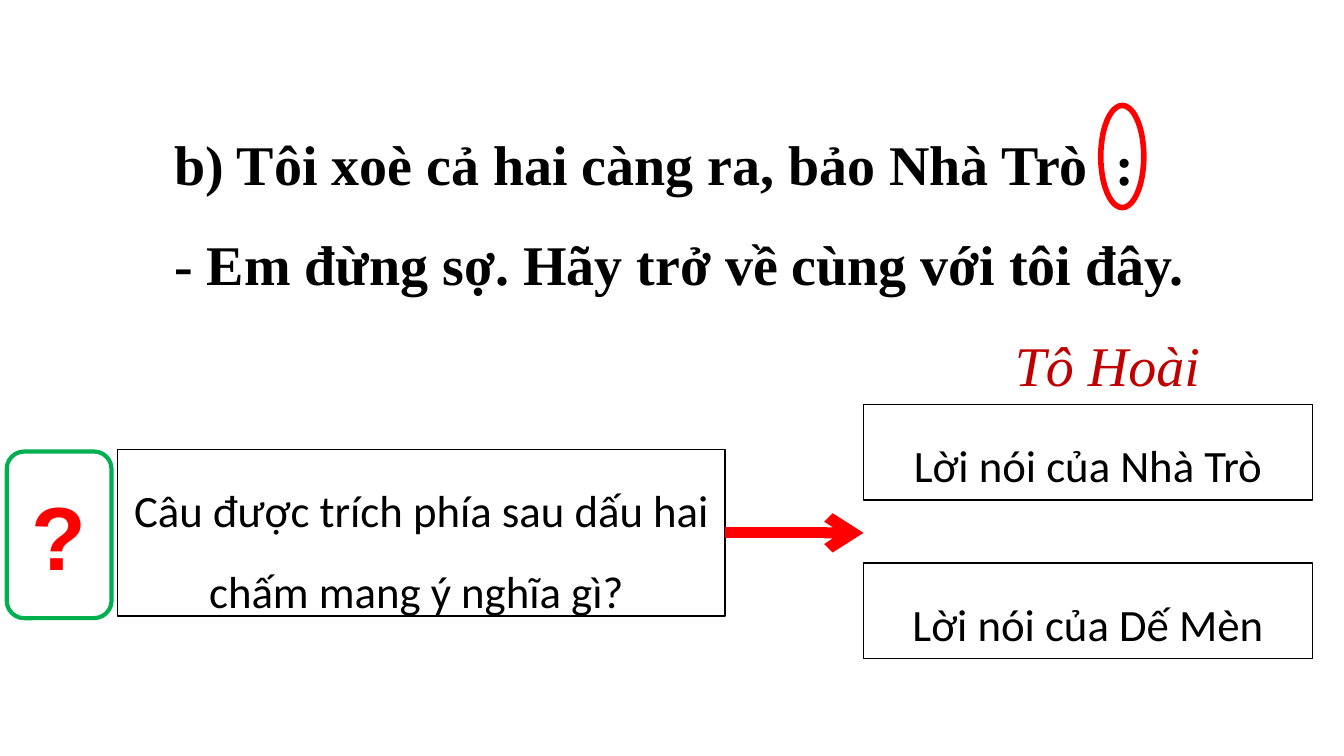
from lxml import etree
from pptx import Presentation
from pptx.dml.color import RGBColor
from pptx.enum.shapes import MSO_CONNECTOR, MSO_SHAPE
from pptx.enum.text import MSO_ANCHOR, MSO_AUTO_SIZE, PP_ALIGN
from pptx.oxml.ns import qn
from pptx.util import Pt

PX = 4572  # 200 px to the inch
RECT, ROUND, OVAL = MSO_SHAPE.RECTANGLE, MSO_SHAPE.ROUNDED_RECTANGLE, MSO_SHAPE.OVAL
LEFT, MID, JUST = PP_ALIGN.LEFT, PP_ALIGN.CENTER, PP_ALIGN.JUSTIFY
TOP, MIDDLE = MSO_ANCHOR.TOP, MSO_ANCHOR.MIDDLE
GROW = MSO_AUTO_SIZE.SHAPE_TO_FIT_TEXT


def color(code):
    return RGBColor.from_string(code)


def style(para, align, face, size, code, bold=False, space=1.5):
    para.alignment = align
    para.line_spacing = space
    font = para.font
    font.name, font.size, font.bold = face, Pt(size), bold
    font.color.rgb = color(code)


prs = Presentation()
prs.slide_width, prs.slide_height = 2000 * PX, 1125 * PX
slide = prs.slides.add_slide(prs.slide_layouts[6])
shapes = slide.shapes

# Quoted passage and its author
quote = shapes.add_textbox(244 * PX, 134 * PX, 1670 * PX, 470 * PX)
frame = quote.text_frame
frame.word_wrap = True
frame.auto_size = GROW
frame.margin_left = frame.margin_right = 15 * PX
frame.margin_top = frame.margin_bottom = 8 * PX
lines = [
    ("b) Tôi xoè cả hai càng ra, bảo Nhà Trò  : ", JUST, "000000", True),
    ("- Em đừng sợ. Hãy trở về cùng với tôi đây. ", JUST, "000000", True),
    ("Tô Hoài", LEFT, "C00000", False),
]
for i, (text, align, code, bold) in enumerate(lines):
    para = frame.add_paragraph() if i else frame.paragraphs[0]
    para.text = text
    style(para, align, "Times New Roman", 30, code, bold)
para.font.italic = True
indent = para._p.get_or_add_pPr()
indent.set("marL", str(1251 * PX))
indent.set("indent", "0")

# Ring round the colon, question, question mark, two answers
boxes = [
    (OVAL, 1638, 157, 64, 152, "FF0000", 3, ""),
    (RECT, 175, 669, 904, 248, "000000", 0.75,
     "Câu được trích phía sau dấu hai chấm mang ý nghĩa gì? "),
    (ROUND, 10, 672, 156, 248, "00B050", 2.25, "?"),
    (RECT, 1285, 602, 668, 142, "000000", 0.75, "Lời nói của Nhà Trò"),
    (RECT, 1285, 838, 668, 142, "000000", 0.75, "Lời nói của Dế Mèn"),
]
for kind, x, y, w, h, code, width, text in boxes:
    box = shapes.add_shape(kind, x * PX, y * PX, w * PX, h * PX)
    box.shadow.inherit = False
    box.line.color.rgb = color(code)
    box.line.width = Pt(width)
    box.fill.background()
    if not text:
        continue
    frame = box.text_frame
    frame.word_wrap = True
    para = frame.paragraphs[0]
    para.text = text
    if kind == ROUND:
        box.fill.solid()
        box.fill.fore_color.rgb = color("FFFFFF")
        frame.vertical_anchor = MIDDLE
        style(para, MID, "Arial", 48, "FF0000", True, 1.0)
    else:
        frame.vertical_anchor = TOP
        frame.auto_size = GROW
        style(para, MID, "Calibri", 24, "000000")

# Arrow from the question to the answers
arrow = shapes.add_connector(MSO_CONNECTOR.STRAIGHT, 1079 * PX, 793 * PX, 1285 * PX, 793 * PX)
arrow.line.color.rgb = color("FF0000")
arrow.line.width = Pt(6)
etree.SubElement(arrow.line._get_or_add_ln(), qn("a:tailEnd"), type="arrow")
etree.SubElement(arrow._element.spPr, qn("a:effectLst"))

prs.save("out.pptx")
